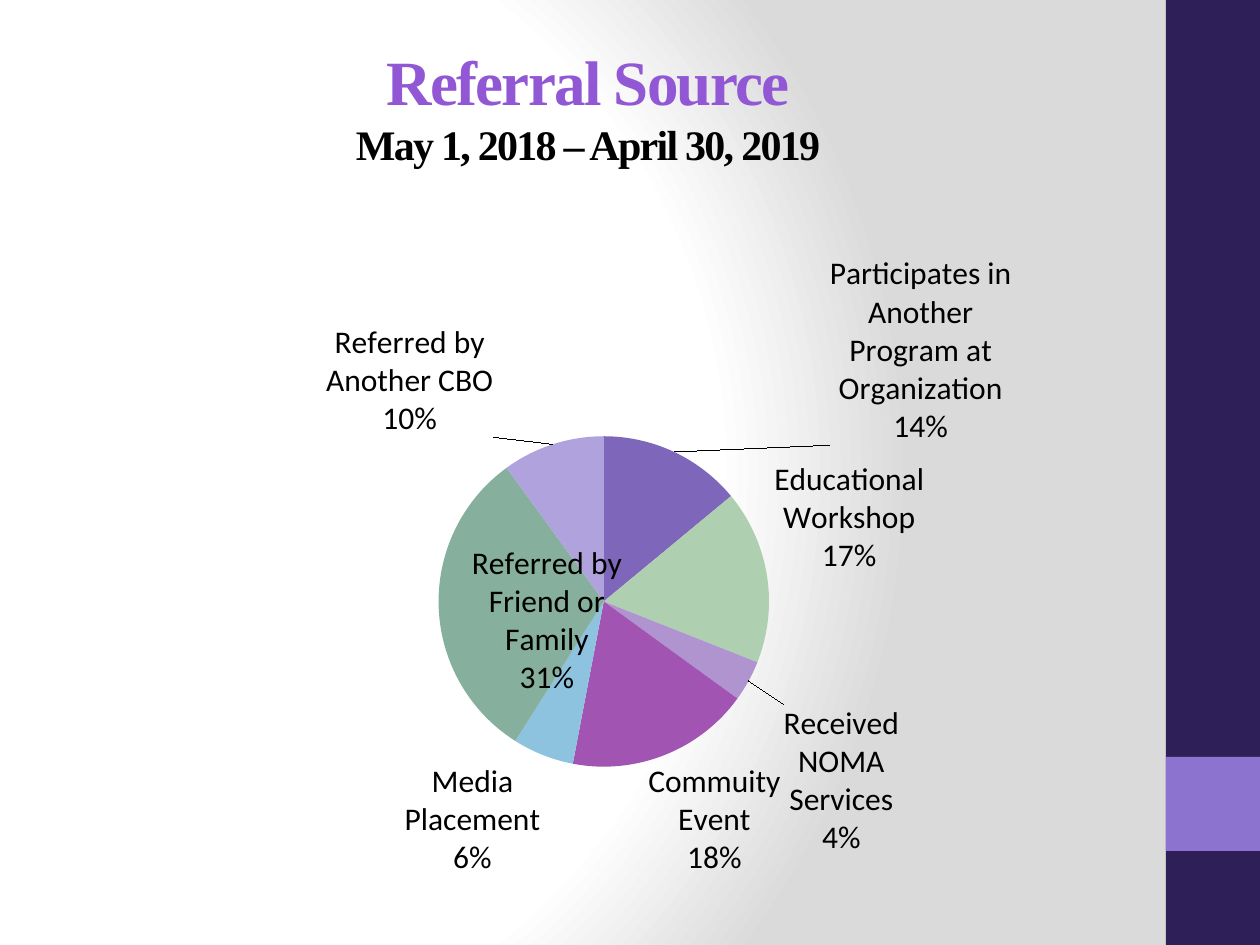
from pptx import Presentation
from pptx.chart.data import CategoryChartData
from pptx.dml.color import RGBColor
from pptx.enum.chart import XL_CHART_TYPE
from pptx.enum.shapes import MSO_SHAPE
from pptx.enum.text import MSO_ANCHOR, PP_ALIGN
from pptx.oxml import parse_xml
from pptx.oxml.ns import nsdecls
from pptx.util import Pt

PX_PER_INCH = 126

# category, percent, slice colour, label shift as a share of the chart box
REFERRALS = [
    ("Participates in Another Program at Organization", 14, "7E67BA", (0.16, 0)),
    ("Educational Workshop", 17, "AED0B0", None),
    ("Received NOMA Services", 4, "B094CF", (0.03, 0.03)),
    ("Commuity Event", 18, "A154B2", (-0.02, 0)),
    ("Media Placement", 6, "8EC3E0", None),
    ("Referred by Friend or Family", 31, "86B09D", (0.2, 0.02)),
    ("Referred by Another CBO", 10, "B0A2DD", (-0.06, 0)),
]


def px(length):
    return round(length * 914400 / PX_PER_INCH)


def color(hex_string):
    return RGBColor.from_string(hex_string)


def set_background(slide):
    """White centre fading to grey along a circle."""
    stops = "".join(
        f'<a:gs pos="{position}"><a:srgbClr val="{shade}"/></a:gs>'
        for position, shade in ((0, "FFFFFF"), (75000, "FFFFFF"), (100000, "DADADA"))
    )
    background = parse_xml(
        f'<p:bg {nsdecls("p", "a")}><p:bgPr><a:gradFill rotWithShape="1">'
        f'<a:gsLst>{stops}</a:gsLst><a:path path="circle">'
        '<a:fillToRect l="20000" t="50000" r="100000" b="50000"/></a:path>'
        '</a:gradFill><a:effectLst/></p:bgPr></p:bg>'
    )
    slide.element.cSld.insert(0, background)


def add_side_bar(slide, left, top, width, height):
    """Dark bar with a light square one square above its foot."""
    square_top = top + height - 2 * width
    for y, bar_height, fill in ((top, height, "2F1F58"), (square_top, width, "8C73D0")):
        bar = slide.shapes.add_shape(
            MSO_SHAPE.RECTANGLE, px(left), px(y), px(width), px(bar_height)
        )
        bar.shadow.inherit = False
        bar.fill.solid()
        bar.fill.fore_color.rgb = color(fill)
        bar.line.fill.background()


def add_title(slide, left, top, width, height):
    frame = slide.shapes.add_textbox(px(left), px(top), px(width), px(height)).text_frame
    frame.word_wrap = True
    frame.vertical_anchor = MSO_ANCHOR.MIDDLE
    lines = (("Referral Source", 36, "9157D4"), ("May 1, 2018 – April 30, 2019", 24, "000000"))
    paragraph = frame.paragraphs[0]
    paragraph.alignment = PP_ALIGN.CENTER
    for number, (text, size, fill) in enumerate(lines):
        if number:
            paragraph.add_line_break()
        run = paragraph.add_run()
        run.text = text
        run.font.name = "Times New Roman"
        run.font.size = Pt(size)
        run.font.bold = True
        run.font.color.rgb = color(fill)
        run.font._element.set("spc", "-100")


def manual_layout(**values):
    parts = "".join(f'<c:{name} val="{value}"/>' for name, value in values.items())
    return f"<c:layout><c:manualLayout>{parts}</c:manualLayout></c:layout>"


def add_labels(series):
    """Category and percent outside each slice, some moved with leader lines."""
    shown = (
        '<c:dLblPos val="outEnd"/><c:showLegendKey val="0"/><c:showVal val="0"/>'
        '<c:showCatName val="1"/><c:showSerName val="0"/><c:showPercent val="1"/>'
        '<c:showBubbleSize val="0"/><c:separator>\n</c:separator>'
    )
    moved = "".join(
        f'<c:dLbl><c:idx val="{index}"/>{manual_layout(x=shift[0], y=shift[1])}{shown}</c:dLbl>'
        for index, (_, _, _, shift) in enumerate(REFERRALS)
        if shift
    )
    labels = parse_xml(
        f'<c:dLbls {nsdecls("c", "a")}>{moved}<c:numFmt formatCode="0%" sourceLinked="0"/>'
        f'{shown}<c:showLeaderLines val="1"/></c:dLbls>'
    )
    series._element.find("{*}cat").addprevious(labels)


def add_referral_chart(slide, left, top, width, height):
    data = CategoryChartData()
    data.categories = [name for name, *_ in REFERRALS]
    data.add_series("Series 1", [percent for _, percent, *_ in REFERRALS])
    chart = slide.shapes.add_chart(
        XL_CHART_TYPE.PIE, px(left), px(top), px(width), px(height), data
    ).chart
    chart.has_legend = False
    chart.has_title = False
    chart.font.name = "Calibri"
    chart.font.size = Pt(18)
    chart.font.color.rgb = color("000000")
    plot = chart.plots[0]
    plot.vary_by_categories = True
    series = plot.series[0]
    for index, (_, _, fill, _) in enumerate(REFERRALS):
        slice_format = series.points[index].format
        slice_format.fill.solid()
        slice_format.fill.fore_color.rgb = color(fill)
        slice_format.line.fill.background()
    add_labels(series)

    plot_area = chart._chartSpace.chart.plotArea
    for layout in plot_area.findall("{*}layout"):
        plot_area.remove(layout)
    pie_box = manual_layout(
        layoutTarget="inner", xMode="edge", yMode="edge", x=0.35, y=0.3, w=0.35, h=0.5
    )
    pie_box = pie_box.replace("<c:layout>", f'<c:layout {nsdecls("c")}>')
    plot_area.insert(0, parse_xml(pie_box))


def main():
    presentation = Presentation()
    presentation.slide_width = px(1260)
    presentation.slide_height = px(945)
    slide = presentation.slides.add_slide(presentation.slide_layouts[6])
    set_background(slide)
    add_side_bar(slide, 1166, 0, 94, 945)
    add_title(slide, 63, 38, 1050, 135)
    add_referral_chart(slide, 103, 238, 954, 661)
    presentation.save("out.pptx")


if __name__ == "__main__":
    main()
